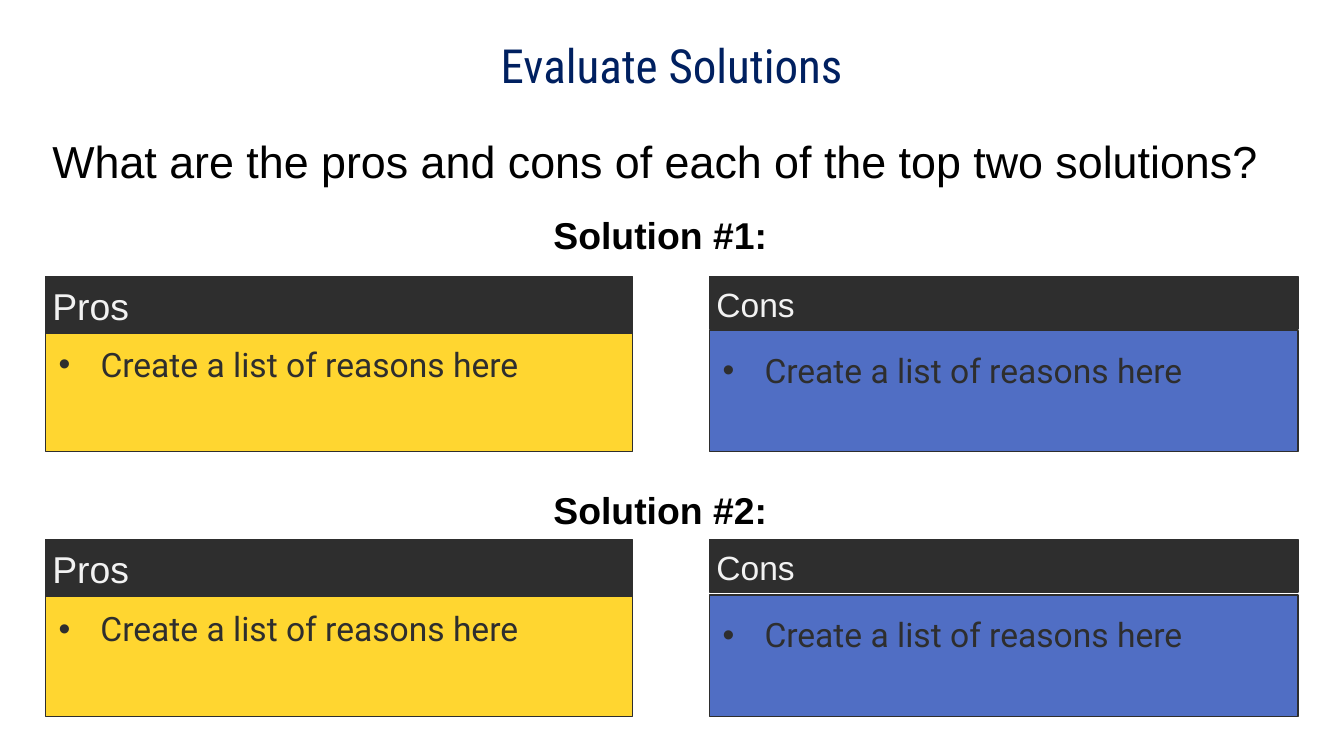
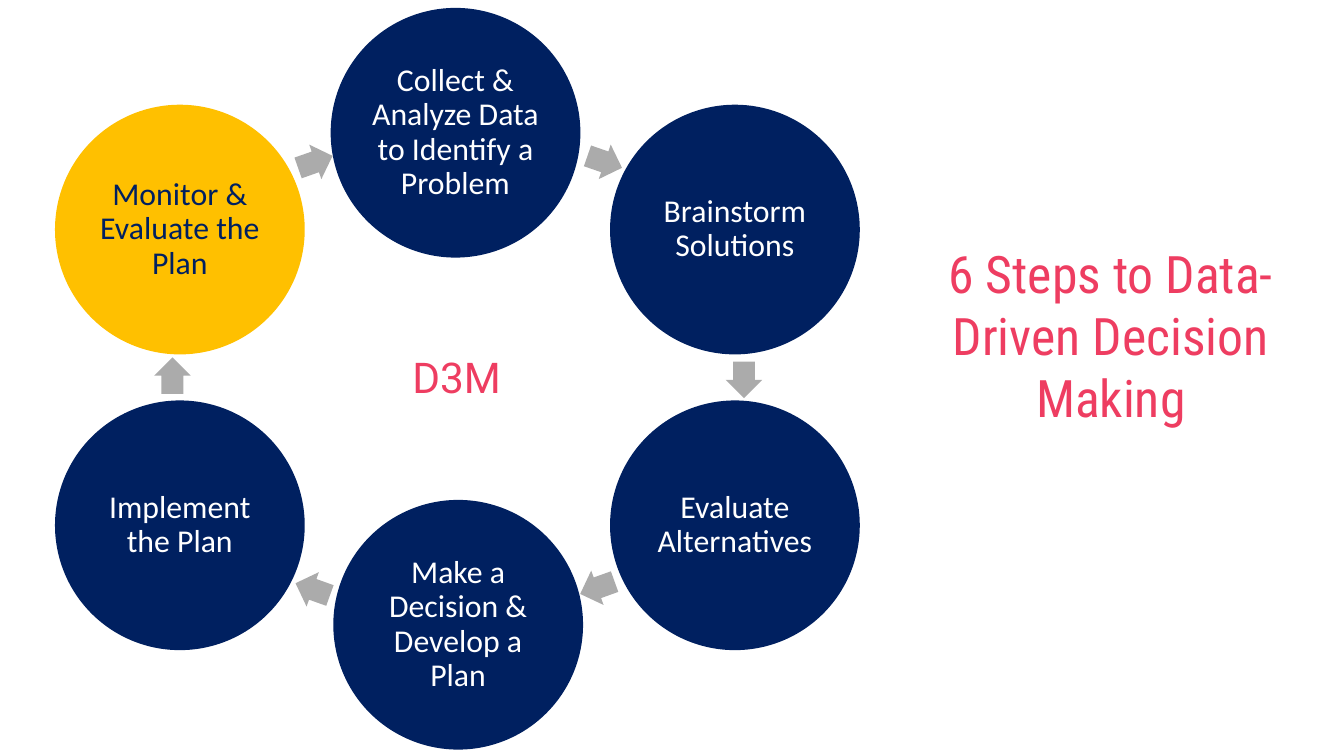
import math

import lxml.etree
import pptx
import pptx.dml.color
import pptx.enum.shapes
import pptx.enum.text
import pptx.oxml.ns
import pptx.util

Cm = pptx.util.Cm
SHAPES = pptx.enum.shapes.MSO_SHAPE
ALIGN = pptx.enum.text.PP_ALIGN
ANCHOR = pptx.enum.text.MSO_ANCHOR

COLORS = {
    "navy": "002060",
    "gold": "FFC000",
    "yellow": "FFD630",
    "blue": "506EC4",
    "dark": "2E2E2E",
    "light": "F2F2F2",
    "white": "FFFFFF",
    "black": "000000",
    "gray": "ABABAB",
    "pink": "EE3D61",
}
TITLE_FONT, BODY_FONT, LABEL_FONT, STEP_FONT = "Roboto Condensed", "Roboto", "Arial", "Calibri"
WIDE_INSET, INSET, STEP_INSET = 0.25, 0.13, 0.04
MARGIN = 0.86
REASON = "Create a list of reasons here"


def color(name):
    """Return the named colour as an RGB value."""
    return pptx.dml.color.RGBColor.from_string(COLORS[name])


def place(shape, box):
    """Move a shape to a box of left, top, width and height in centimetres."""
    shape.left, shape.top, shape.width, shape.height = map(Cm, box)


def paint(shape, fill, line=None):
    """Give a shape a solid fill and an optional thin outline."""
    shape.fill.solid()
    shape.fill.fore_color.rgb = color(fill)
    if line:
        shape.line.color.rgb = color(line)
        shape.line.width = pptx.util.Pt(0.75)
    else:
        shape.line.fill.background()


def add_shape(slide, kind, box, fill, line=None):
    """Add a painted preset shape without a shadow."""
    shape = slide.shapes.add_shape(kind, *map(Cm, box))
    shape.shadow.inherit = False
    paint(shape, fill, line)
    return shape


def set_bullet(paragraph, bullet):
    """Give a paragraph a hanging dark bullet, or no bullet at all."""
    properties = paragraph._p.get_or_add_pPr()
    indent = Cm(0.79) if bullet else 0
    properties.set("marL", str(indent))
    properties.set("indent", str(-indent))

    def add(parent, tag, **attributes):
        return lxml.etree.SubElement(parent, pptx.oxml.ns.qn(tag), attributes)

    if bullet:
        add(add(properties, "a:buClr"), "a:srgbClr", val=COLORS["dark"])
        add(properties, "a:buFont", typeface="Arial")
        add(properties, "a:buChar", char="•")
    else:
        add(properties, "a:buNone")


def write(shape, text, font, size, ink, align=ALIGN.LEFT, anchor=ANCHOR.TOP,
          inset=INSET, bold=False, spacing=1.0, bullet=False):
    """Put one formatted paragraph into a shape."""
    frame = shape.text_frame
    frame.word_wrap = True
    frame.auto_size = pptx.enum.text.MSO_AUTO_SIZE.NONE
    frame.vertical_anchor = anchor
    frame.margin_left = frame.margin_top = frame.margin_right = frame.margin_bottom = Cm(inset)
    frame.text = text
    paragraph = frame.paragraphs[0]
    set_bullet(paragraph, bullet)
    paragraph.alignment = align
    paragraph.line_spacing = spacing
    paragraph.space_before = pptx.util.Pt(0)
    paragraph.font.name = font
    paragraph.font.size = pptx.util.Pt(size)
    paragraph.font.bold = bold
    paragraph.font.color.rgb = color(ink)


def add_slide(presentation, title, box, size, ink):
    """Add a title and content slide with its title in place."""
    slide = presentation.slides.add_slide(presentation.slide_layouts[1])
    place(slide.shapes.title, box)
    write(slide.shapes.title, title, TITLE_FONT, size, ink, ALIGN.CENTER, inset=WIDE_INSET)
    return slide


def add_label(slide, box, text, size, **options):
    """Add a plain black line of text."""
    label = slide.shapes.add_textbox(*map(Cm, box))
    write(label, text, LABEL_FONT, size, "black", **options)


def add_card(slide, box, header, header_height, header_size, fill, spacing, body=None):
    """Add a list of reasons under a dark header, in the given box."""
    left, top, width, height = box
    body_height = 2.29
    body_box = (left, top + height - body_height, width, body_height)
    if body is None:
        body = add_shape(slide, SHAPES.RECTANGLE, body_box, fill, "dark")
    else:
        place(body, body_box)
        paint(body, fill, "dark")
    write(body, REASON, BODY_FONT, 18, "dark", inset=WIDE_INSET, spacing=spacing, bullet=True)
    bar = add_shape(slide, SHAPES.RECTANGLE, (left, top, width, header_height), "dark", "dark")
    write(bar, header, LABEL_FONT, header_size, "light")


def add_solution(slide, number, label_top, top, height, body=None):
    """Add the heading of one solution and its pros and cons side by side."""
    add_label(slide, (MARGIN, label_top, 23.44, 1.04), f"Solution #{number}: ", 20,
              align=ALIGN.CENTER, bold=True)
    add_card(slide, (MARGIN, top, 11.1, height), "Pros", 1.07, 20, "yellow", 1.0, body)
    add_card(slide, (13.41, top, 11.12, height), "Cons", 0.99, 18, "blue", 1.15)


def build_evaluation(presentation):
    """Build the slide that weighs the top two solutions."""
    slide = add_slide(presentation, "Evaluate Solutions", (MARGIN, 0.43, 23.67, 1.6), 25.2, "navy")
    add_label(slide, (MARGIN, 2.39, 23.44, 1.22),
              "What are the pros and cons of each of the top two solutions?", 24)
    add_solution(slide, 1, 3.89, 5.23, 3.31, slide.placeholders[1])
    add_solution(slide, 2, 9.07, 10.2, 3.34)


def add_cycle(slide, left, top):
    """Add the ring of steps, each with an arrow that points to the next."""
    diameter, arrow_size = 4.72, 0.69
    steps = [
        ("Collect & Analyze Data to Identify a Problem", (7.57, 2.36), (10.39, 2.91)),
        ("Brainstorm Solutions", (12.85, 4.19), (13.02, 7.03)),
        ("Evaluate Alternatives", (12.85, 9.78), (10.25, 10.96)),
        ("Make a Decision & Develop a Plan", (7.62, 11.66), (4.87, 10.99)),
        ("Implement the Plan", (2.36, 9.78), (2.22, 6.95)),
        ("Monitor & Evaluate the Plan", (2.36, 4.19), (4.92, 2.91)),
    ]

    def centered(center, size):
        return left + center[0] - size / 2, top + center[1] - size / 2, size, size

    for index, (text, center, arrow_center) in enumerate(steps):
        is_last = index == len(steps) - 1
        circle = add_shape(slide, SHAPES.OVAL, centered(center, diameter),
                           "gold" if is_last else "navy")
        write(circle, text, STEP_FONT, 17, "navy" if is_last else "white", ALIGN.CENTER,
              ANCHOR.MIDDLE, STEP_INSET, spacing=0.9)
        following = steps[(index + 1) % len(steps)][1]
        arrow = add_shape(slide, SHAPES.RIGHT_ARROW, centered(arrow_center, arrow_size), "gray")
        arrow.adjustments[0], arrow.adjustments[1] = 0.6, 0.5
        angle = math.atan2(following[1] - center[1], following[0] - center[0])
        arrow.rotation = math.degrees(angle) % 360


def build_steps(presentation):
    """Build the slide with the cycle of six steps."""
    slide = add_slide(presentation, "6 Steps to Data-Driven Decision Making",
                      (17.02, 4.32, 7.95, 4.09), 27.7, "pink")
    add_cycle(slide, 1.04, 0.15)
    name = slide.placeholders[1]
    place(name, (4.78, 6.38, 7.7, 1.47))
    write(name, "D3M", BODY_FONT, 22.7, "pink", ALIGN.CENTER, ANCHOR.MIDDLE, WIDE_INSET)


def main():
    """Build and save the presentation."""
    presentation = pptx.Presentation()
    presentation.slide_width, presentation.slide_height = Cm(25.4), Cm(14.29)
    build_evaluation(presentation)
    build_steps(presentation)
    presentation.save("out.pptx")


if __name__ == "__main__":
    main()
